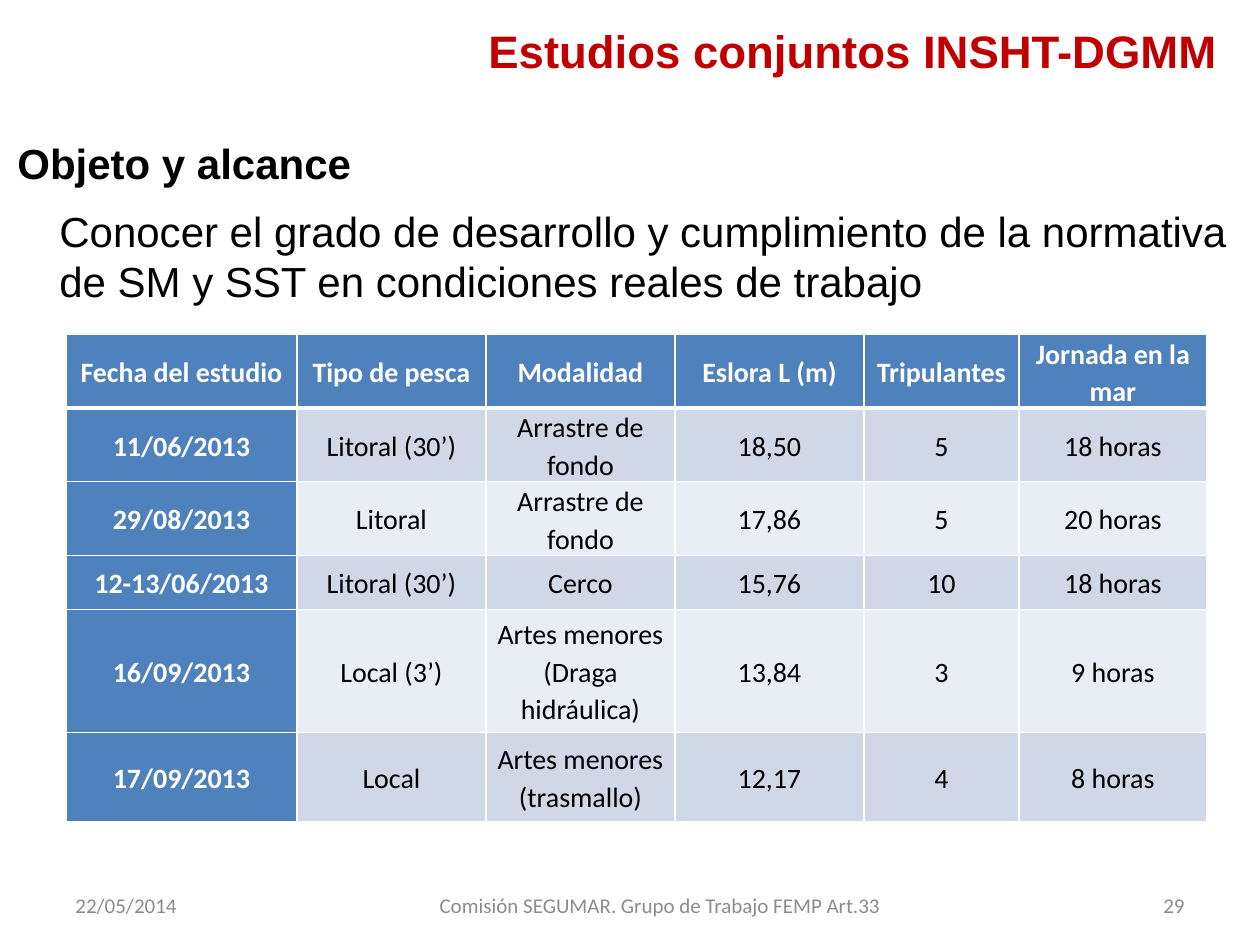
from dataclasses import dataclass

from lxml.etree import SubElement
from pptx import Presentation
from pptx.dml.color import RGBColor as RGB
from pptx.enum.text import MSO_ANCHOR as Anchor, MSO_AUTO_SIZE as AutoSize, PP_ALIGN as Align
from pptx.oxml.ns import qn
from pptx.util import Pt

PX = 914400 / 126


@dataclass(frozen=True)
class Theme:
    heading_font: str = "Arial"
    table_font: str = "Calibri"
    title: str = "C00000"
    text: str = "000000"
    muted: str = "8C8C8C"
    white: str = "FFFFFF"
    accent: str = "4F81BD"
    bands: tuple = ("D0D8E8", "E9EDF4")
    title_size: int = 26
    body_size: int = 24
    table_size: int = 16
    footer_size: int = 12


THEME = Theme()

COLUMNS = [231, 189, 189, 189, 155, 188]
ROW_HEIGHTS = [67, 67, 67, 54, 123, 89]
STUDIES = [
    ["Fecha del estudio", "Tipo de pesca", "Modalidad", "Eslora L (m)", "Tripulantes", "Jornada en la mar"],
    ["11/06/2013", "Litoral (30’)", "Arrastre de fondo", "18,50", "5", "18 horas"],
    ["29/08/2013", "Litoral", "Arrastre de fondo", "17,86", "5", "20 horas"],
    ["12-13/06/2013", "Litoral (30’)", "Cerco", "15,76", "10", "18 horas"],
    ["16/09/2013", "Local (3’)", "Artes menores (Draga hidráulica)", "13,84", "3", "9 horas"],
    ["17/09/2013", "Local", "Artes menores (trasmallo)", "12,17", "4", "8 horas"],
]


def px(n):
    return round(n * PX)


def style(p, font, size, color, bold=False, align=Align.LEFT):
    p.alignment = align
    p.font.name = font
    p.font.size = Pt(size)
    p.font.bold = bold
    p.font.color.rgb = RGB.from_string(color)


def add_text(slide, box, text, anchor=Anchor.TOP, **look):
    tf = slide.shapes.add_textbox(*map(px, box)).text_frame
    tf.word_wrap = True
    tf.vertical_anchor = anchor
    tf.text = text
    style(tf.paragraphs[0], **look)


def add_title(slide, box, text):
    s = slide.shapes.title
    s.left, s.top, s.width, s.height = map(px, box)
    tf = s.text_frame
    tf.text = text
    tf.auto_size = AutoSize.NONE
    tf.vertical_anchor = Anchor.MIDDLE
    style(tf.paragraphs[0], THEME.heading_font, THEME.title_size, THEME.title, True, Align.CENTER)


def add_scope(slide, box, heading, text):
    x, y, w, h = box
    look = dict(font=THEME.heading_font, size=THEME.body_size, color=THEME.text)
    add_text(slide, (x, y, w, 63), heading, bold=True, **look)
    add_text(slide, (x + 42, y + 68, w - 55, h - 68), text, **look)


def set_borders(cell, widths):
    tc_pr = cell._tc.get_or_add_tcPr()
    for i, (side, width) in enumerate(widths.items()):
        ln = SubElement(tc_pr, qn(f"a:ln{side}"), w=str(Pt(width)))
        fill = SubElement(ln, qn("a:solidFill"))
        SubElement(fill, qn("a:srgbClr"), val=THEME.white)
        tc_pr.insert(i, ln)


def format_cell(cell, text, row, col):
    is_header = row == 0 or col == 0
    cell.text = text
    cell.vertical_anchor = Anchor.MIDDLE
    cell.margin_left = cell.margin_right = px(6)
    cell.margin_top = cell.margin_bottom = 0
    cell.fill.solid()
    color = THEME.accent if is_header else THEME.bands[(row - 1) % 2]
    cell.fill.fore_color.rgb = RGB.from_string(color)
    p = cell.text_frame.paragraphs[0]
    p.line_spacing = 1.1
    style(p, THEME.table_font, THEME.table_size,
          THEME.white if is_header else THEME.text, is_header, Align.CENTER)
    set_borders(cell, {"L": 1, "R": 1, "T": 3 if row == 1 else 1, "B": 3 if row == 0 else 1})


def add_studies(slide, x, y):
    size = (sum(COLUMNS), sum(ROW_HEIGHTS))
    table = slide.shapes.add_table(len(STUDIES), len(COLUMNS), *map(px, (x, y, *size))).table
    for column, width in zip(table.columns, COLUMNS):
        column.width = px(width)
    for row, height in zip(table.rows, ROW_HEIGHTS):
        row.height = px(height)
    for r, values in enumerate(STUDIES):
        for c, text in enumerate(values):
            format_cell(table.cell(r, c), text, r, c)


def add_footer(slide, box, date, label, number):
    x, y, w, h = box
    parts = [
        (0, 294, date, Align.LEFT),
        (349, 496, label, Align.CENTER),
        (w - 160, 160, number, Align.RIGHT),
    ]
    for left, width, text, align in parts:
        add_text(slide, (x + left, y, width, h), text, Anchor.MIDDLE, font=THEME.table_font,
                 size=THEME.footer_size, color=THEME.muted, align=align)


def main():
    prs = Presentation()
    prs.slide_width, prs.slide_height = px(1260), px(945)
    slide = prs.slides.add_slide(prs.slide_layouts[5])
    add_title(slide, (441, -14, 824, 129), "Estudios conjuntos INSHT-DGMM")
    add_scope(slide, (5, 131, 1253, 183), "Objeto y alcance",
              "Conocer el grado de desarrollo y cumplimiento de la normativa "
              "de SM y SST en condiciones reales de trabajo")
    add_studies(slide, 66, 334)
    add_footer(slide, (63, 880, 1134, 50), "22/05/2014",
               "Comisión SEGUMAR. Grupo de Trabajo FEMP Art.33", "29")
    prs.save("out.pptx")


if __name__ == "__main__":
    main()
